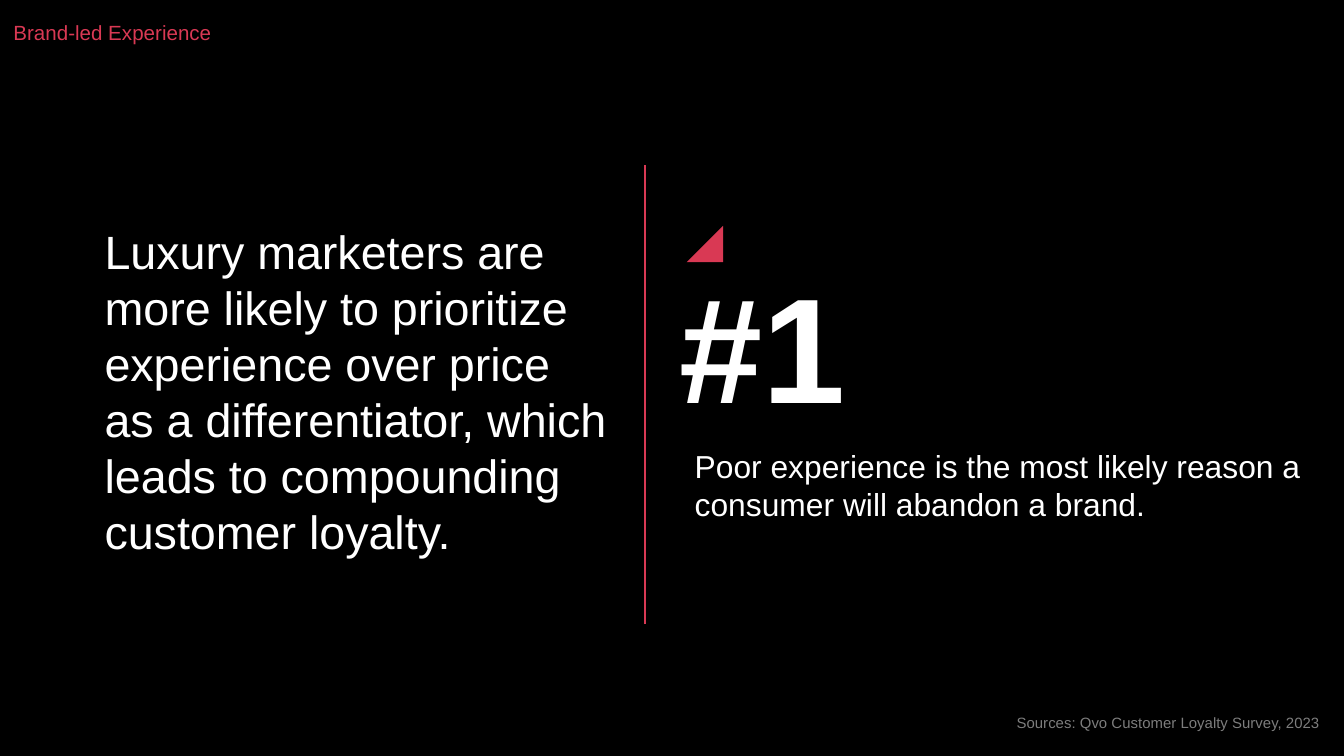
from dataclasses import dataclass

from lxml.etree import SubElement
from pptx import Presentation
from pptx.dml.color import RGBColor
from pptx.enum.shapes import MSO_CONNECTOR, MSO_SHAPE
from pptx.enum.text import MSO_ANCHOR, MSO_AUTO_SIZE, PP_ALIGN
from pptx.oxml.ns import qn
from pptx.shapes.autoshape import Shape
from pptx.slide import Slide
from pptx.util import Inches, Pt

BLACK = "000000"
WHITE = "FFFFFF"
ROSE = "D93954"
GRAY = "7D7D7D"


@dataclass(frozen=True)
class TextBlock:
    text: str
    left: float
    top: float
    width: float
    height: float
    size: int
    color: str = WHITE
    bold: bool = False
    align: PP_ALIGN = PP_ALIGN.LEFT


HEADING = TextBlock("Brand-led Experience", 0, 0, 4.78, 0.48, 11, color=ROSE)
BLOCKS = (
    TextBlock("#1", 4.96, 1.81, 4.53, 1.49, 80, bold=True),
    TextBlock(
        "Poor experience is the most likely reason a consumer will abandon a brand.",
        5.07, 3.29, 4.81, 0.63, 17,
    ),
    TextBlock(
        "Luxury marketers are more likely to prioritize experience over price "
        "as a differentiator, which leads to compounding customer loyalty.",
        0.68, 0.48, 3.94, 4.85, 25,
    ),
    TextBlock(
        "Sources: Qvo Customer Loyalty Survey, 2023",
        5.11, 5.21, 4.81, 0.34, 8, color=GRAY, align=PP_ALIGN.RIGHT,
    ),
)


def rgb(value: str) -> RGBColor:
    return RGBColor.from_string(value)


def write_text(
    box: Shape, text: str, *, size: int, color: str, bold: bool, align: PP_ALIGN
) -> None:
    frame = box.text_frame
    frame.word_wrap = True
    frame.auto_size = MSO_AUTO_SIZE.NONE
    frame.vertical_anchor = MSO_ANCHOR.MIDDLE
    frame.margin_left = frame.margin_right = Inches(0.1)
    frame.margin_top = frame.margin_bottom = Inches(0.1)
    para = frame.paragraphs[0]
    para.alignment = align
    para.line_spacing = 1.0
    span = para.add_run()
    span.text = text
    span.font.name = "Arial"
    span.font.size = Pt(size)
    span.font.bold = bold
    span.font.color.rgb = rgb(color)


def place_block(box: Shape, block: TextBlock) -> None:
    box.left, box.top = Inches(block.left), Inches(block.top)
    box.width, box.height = Inches(block.width), Inches(block.height)
    write_text(
        box, block.text, size=block.size, color=block.color,
        bold=block.bold, align=block.align,
    )


def add_corner(slide: Slide, left: float, top: float, side: float) -> None:
    corner = slide.shapes.add_shape(
        MSO_SHAPE.RIGHT_TRIANGLE,
        Inches(left), Inches(top), Inches(side), Inches(side),
    )
    corner.rotation = 270
    corner.shadow.inherit = False
    corner.fill.solid()
    corner.fill.fore_color.rgb = rgb(ROSE)
    corner.line.fill.background()


def add_divider(slide: Slide, x: float, top: float, bottom: float) -> None:
    divider = slide.shapes.add_connector(
        MSO_CONNECTOR.STRAIGHT, Inches(x), Inches(top), Inches(x), Inches(bottom)
    )
    divider.line.color.rgb = rgb(ROSE)
    divider.line.width = Pt(0.75)
    SubElement(divider._element.spPr, qn("a:effectLst"))


def main() -> None:
    """Build the brand-led experience slide."""
    deck = Presentation()
    deck.slide_width = Inches(10)
    deck.slide_height = deck.slide_width * 9 // 16
    slide = deck.slides.add_slide(deck.slide_layouts.get_by_name("Title Only"))
    slide.background.fill.solid()
    slide.background.fill.fore_color.rgb = rgb(BLACK)

    place_block(slide.shapes.title, HEADING)
    for block in BLOCKS:
        place_block(slide.shapes.add_textbox(0, 0, 0, 0), block)
    add_corner(slide, 5.11, 1.68, 0.27)
    add_divider(slide, 4.8, 1.23, 4.64)
    deck.save("out.pptx")


if __name__ == "__main__":
    main()
